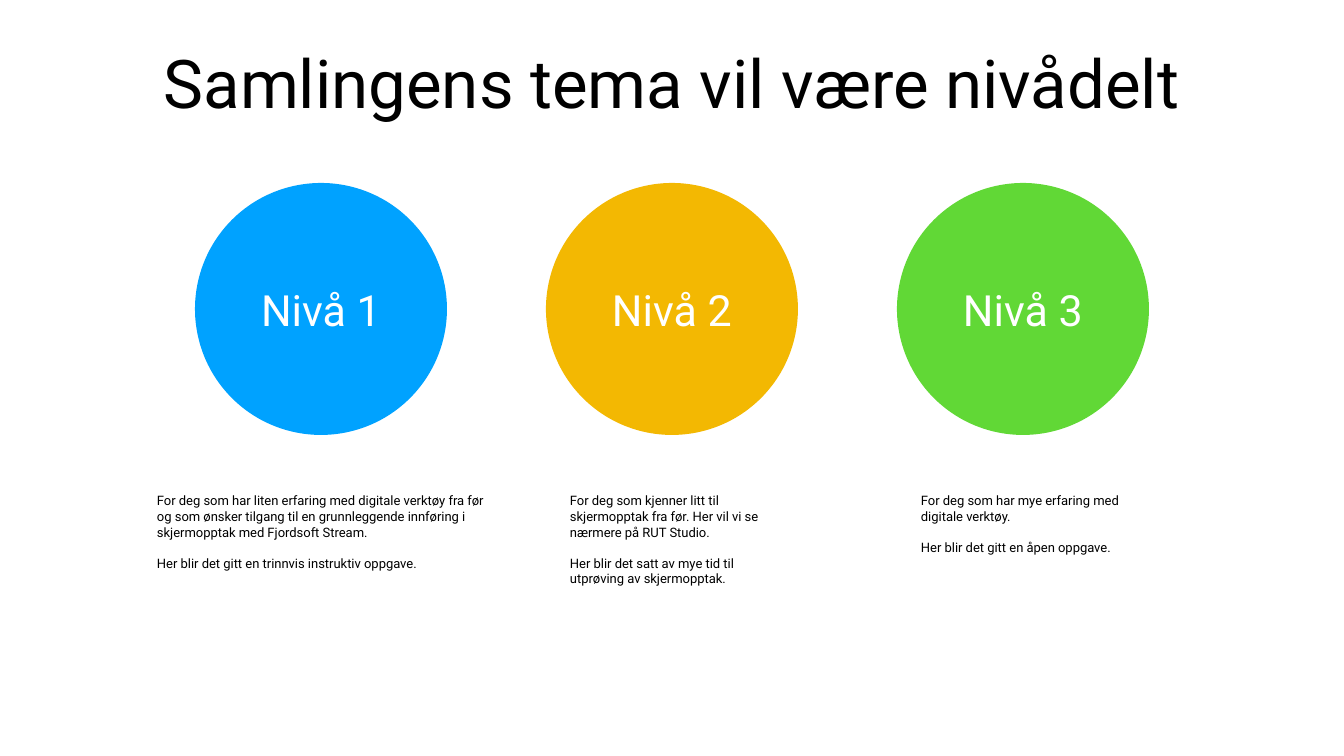
"""Build a slide that presents three workshop levels."""
from pptx import Presentation
from pptx.dml.color import RGBColor
from pptx.enum.shapes import MSO_SHAPE
from pptx.enum.text import MSO_ANCHOR, PP_ALIGN
from pptx.util import Emu, Pt

PIXELS_PER_INCH = 100.8
FONT = "Roboto"
COLOURS = {
    "text": "000000",
    "label": "FFFFFF",
    "blue": "00A2FF",
    "yellow": "F3B802",
    "green": "61D836",
}
FIRST_CENTRE, CENTRE_STEP = 321, 351
CIRCLE_TOP, CIRCLE_SIZE = 183, 252
DESCRIPTION_TOP, DESCRIPTION_HEIGHT = 490, 252
LEVELS = [
    ("Nivå 1", "blue", 334, [
        "For deg som har liten erfaring med digitale verktøy fra før og som "
        "ønsker tilgang til en grunnleggende innføring i skjermopptak med "
        "Fjordsoft Stream.",
        "Her blir det gitt en trinnvis instruktiv oppgave.",
    ]),
    ("Nivå 2", "yellow", 210, [
        "For deg som kjenner litt til skjermopptak fra før. Her vil vi se "
        "nærmere på RUT Studio.",
        "Her blir det satt av mye tid til utprøving av skjermopptak.",
    ]),
    ("Nivå 3", "green", 210, [
        "For deg som har mye erfaring med digitale verktøy.",
        "Her blir det gitt en åpen oppgave.",
    ]),
]


def px(length):
    """Turn a length in pixels into EMU."""
    return Emu(round(length * 914400 / PIXELS_PER_INCH))


def colour(name):
    """Return the named colour."""
    return RGBColor.from_string(COLOURS[name])


def write(shape, paragraphs, size, colour_name, align, anchor, inset, gap=0):
    """Fill a shape with evenly styled paragraphs."""
    frame = shape.text_frame
    frame.word_wrap = True
    frame.vertical_anchor = anchor
    frame.margin_left = frame.margin_right = px(inset)
    frame.margin_top = frame.margin_bottom = px(inset)
    frame.text = "\n".join(paragraphs)
    for index, paragraph in enumerate(frame.paragraphs):
        paragraph.alignment = align
        paragraph.space_before = Pt(gap if index else 0)
        paragraph.font.name = FONT
        paragraph.font.size = Pt(size)
        paragraph.font.color.rgb = colour(colour_name)


def add_title(slide, text):
    """Add the centred heading."""
    shape = slide.shapes.add_textbox(px(93), px(19), px(1158), px(126))
    write(shape, [text], 48, "text", PP_ALIGN.CENTER, MSO_ANCHOR.MIDDLE, 6)


def add_circle(slide, centre, label, fill):
    """Add a coloured circle with a level label."""
    shape = slide.shapes.add_shape(
        MSO_SHAPE.OVAL, px(centre - CIRCLE_SIZE / 2), px(CIRCLE_TOP),
        px(CIRCLE_SIZE), px(CIRCLE_SIZE))
    shape.shadow.inherit = False
    shape.fill.solid()
    shape.fill.fore_color.rgb = colour(fill)
    shape.line.fill.background()
    write(shape, [label], 30.7, "label", PP_ALIGN.CENTER, MSO_ANCHOR.MIDDLE, 0)


def add_description(slide, centre, width, paragraphs):
    """Add the text below a circle."""
    shape = slide.shapes.add_textbox(
        px(centre - width / 2), px(DESCRIPTION_TOP),
        px(width), px(DESCRIPTION_HEIGHT))
    write(shape, paragraphs, 9.3, "text", PP_ALIGN.LEFT, MSO_ANCHOR.TOP, 3, 11)


def main():
    """Build and save the presentation."""
    presentation = Presentation()
    presentation.slide_width, presentation.slide_height = px(1344), px(756)
    slide = presentation.slides.add_slide(presentation.slide_layouts[6])
    add_title(slide, "Samlingens tema vil være nivådelt")
    for index, (label, fill, width, paragraphs) in enumerate(LEVELS):
        centre = FIRST_CENTRE + index * CENTRE_STEP
        add_circle(slide, centre, label, fill)
        add_description(slide, centre, width, paragraphs)
    presentation.save("out.pptx")


if __name__ == "__main__":
    main()
